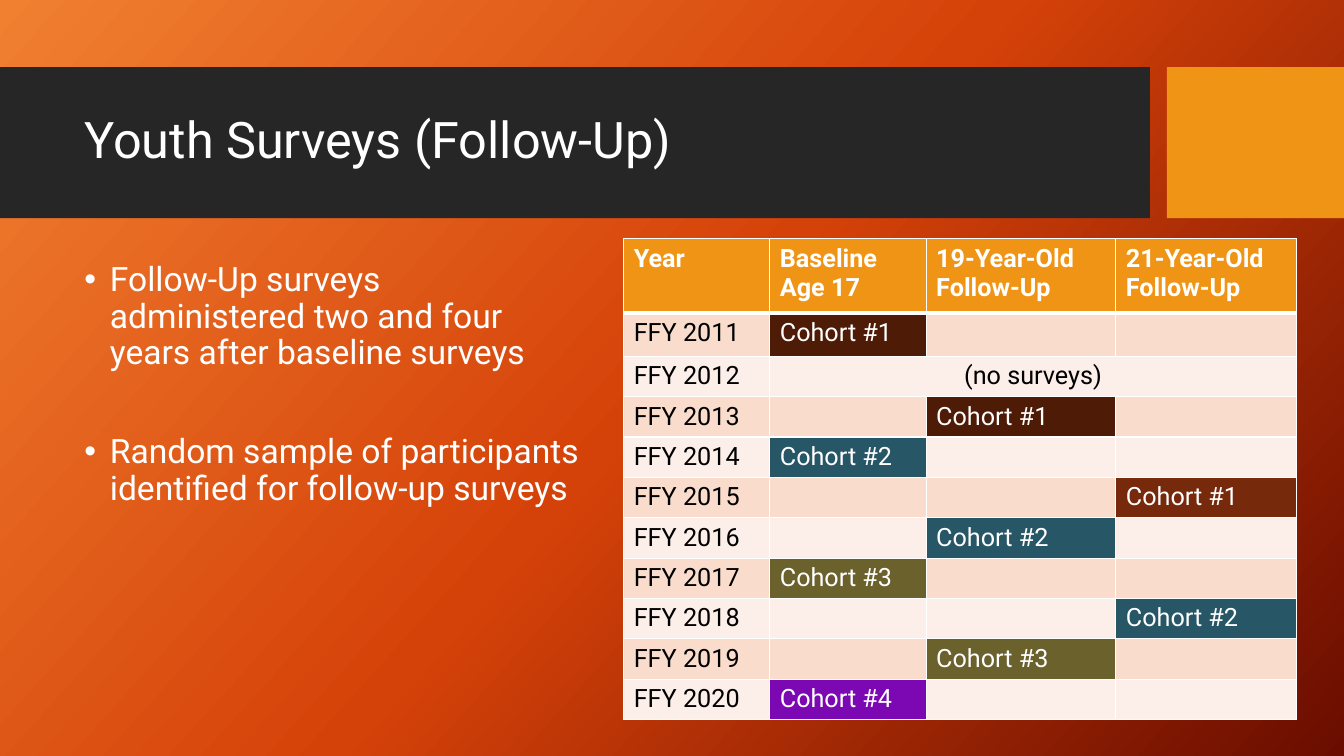
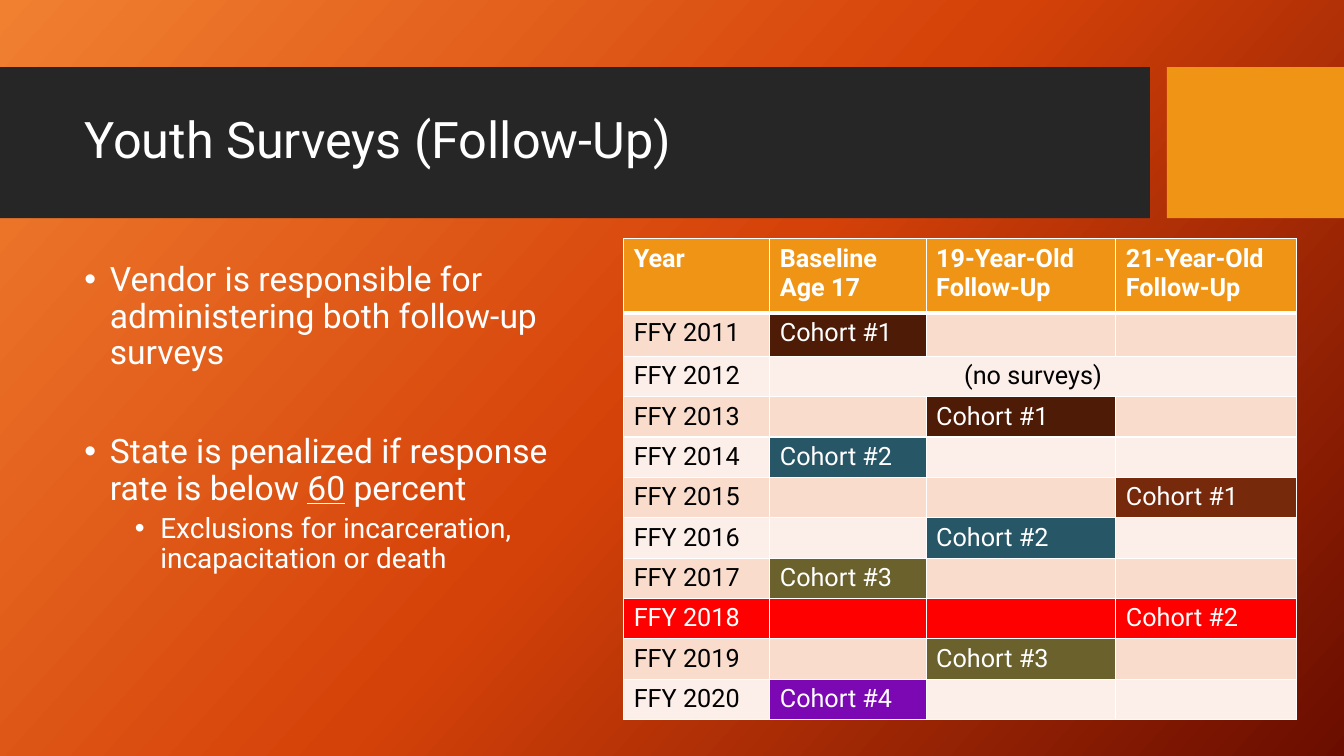
"""Build two slides on follow-up youth surveys, each with bullets and a cohort table."""
from copy import deepcopy

from lxml.etree import SubElement
from pptx import Presentation
from pptx.dml.color import RGBColor
from pptx.enum.shapes import MSO_SHAPE
from pptx.enum.text import MSO_ANCHOR, PP_ALIGN
from pptx.oxml import parse_xml
from pptx.oxml.ns import nsdecls, qn
from pptx.util import Cm, Pt

FONT = "Roboto"
WHITE, BLACK, DARK, ORANGE, RED = "FFFFFF", "000000", "262626", "F09415", "FF0000"
BACKDROP = [(0, "F18031"), (0.5, "D54209"), (1, "6A0D00")]
STRIPES = ["F9DCCC", "FCEEE8"]
BANDS = [(0, 28.98, DARK), (29.41, 4.46, ORANGE)]
BAND_TOP, BAND_HEIGHT = 1.69, 3.81
TITLE = "Youth Surveys (Follow-Up)"

LEVELS = [
    {"size": 24, "margin": 0.64, "before": 45},
    {"size": 20, "margin": 1.91, "before": 5},
]
INDENT = 0.64

COL_WIDTHS = [3.68, 3.94, 4.78, 4.55]
ROW_HEIGHTS = [1.86, 1.1] + [1] * 9
HEADERS = [["Year"], ["Baseline", "Age 17"], ["19-Year-Old", "Follow-Up"],
           ["21-Year-Old", "Follow-Up"]]
FIRST_YEAR = 2011
COHORTS = {
    2011: (1, "Cohort #1", "4E1B07"),
    2013: (2, "Cohort #1", "4E1B07"),
    2014: (1, "Cohort #2", "275666"),
    2015: (3, "Cohort #1", "76290B"),
    2016: (2, "Cohort #2", "275666"),
    2017: (1, "Cohort #3", "6A612C"),
    2018: (3, "Cohort #2", "275666"),
    2019: (2, "Cohort #3", "6A612C"),
    2020: (1, "Cohort #4", "7C08B3"),
}
NO_SURVEYS = 2012

SLIDES = [
    {"bullets": [
        (0, ["Follow-Up surveys administered two and four years after baseline surveys"]),
        (0, ["Random sample of participants identified for follow-up surveys"])],
     "alert_year": None},
    {"bullets": [
        (0, ["Vendor is responsible for administering both follow-up surveys"]),
        (0, ["State is penalized if response rate is below ", "60", " percent"]),
        (1, ["Exclusions for incarceration, incapacitation or death"])],
     "alert_year": 2018},
]
UNDERLINED = "60"


def rgb(value):
    return RGBColor.from_string(value)


def write(p, text, color, **fmt):
    r = p.add_run()
    r.text = text
    r.font.color.rgb = rgb(color)
    for name, value in {"name": FONT, **fmt}.items():
        setattr(r.font, name, value)


prs = Presentation()
prs.slide_width, prs.slide_height = Cm(33.87), Cm(19.05)

fill = prs.slide_master.background.fill
fill.gradient()
fill.gradient_angle = 360 - 42
gs_list = prs.slide_master.element.find(".//" + qn("a:gsLst"))
gs_list.append(deepcopy(gs_list[-1]))
for stop, (position, color) in zip(fill.gradient_stops, BACKDROP):
    stop.position = position
    stop.color.rgb = rgb(color)

for content in SLIDES:
    s = prs.slides.add_slide(prs.slide_layouts[6])

    for left, width, color in BANDS:
        sp = s.shapes.add_shape(MSO_SHAPE.RECTANGLE, Cm(left), Cm(BAND_TOP),
                                Cm(width), Cm(BAND_HEIGHT))
        sp.shadow.inherit = False
        sp.fill.solid()
        sp.fill.fore_color.rgb = rgb(color)
        sp.line.fill.background()

    tf = s.shapes.add_textbox(Cm(1.88), Cm(2.08), Cm(26.7), Cm(3)).text_frame
    tf.word_wrap = True
    tf.vertical_anchor = MSO_ANCHOR.MIDDLE
    p = tf.paragraphs[0]
    p.line_spacing = 0.9
    write(p, TITLE, WHITE, size=Pt(36))

    tf = s.shapes.add_textbox(Cm(1.88), Cm(6.5), Cm(13.06), Cm(11.63)).text_frame
    tf.word_wrap = True
    for i, (level, texts) in enumerate(content["bullets"]):
        style = LEVELS[level]
        p = tf.add_paragraph() if i else tf.paragraphs[0]
        p.level = level
        pPr = p._p.get_or_add_pPr()
        pPr.set("marL", str(Cm(style["margin"])))
        pPr.set("indent", str(-Cm(INDENT)))
        SubElement(pPr, qn("a:buFont"), typeface="Arial")
        SubElement(pPr, qn("a:buChar"), char="•")
        p.line_spacing = 0.9
        p.space_before = Pt(style["before"] if i else 0)
        for text in texts:
            write(p, text, WHITE, size=Pt(style["size"]), underline=text == UNDERLINED)

    table = s.shapes.add_table(len(ROW_HEIGHTS), len(COL_WIDTHS), Cm(15.72), Cm(6.02),
                               Cm(sum(COL_WIDTHS)), Cm(sum(ROW_HEIGHTS))).table
    table.horz_banding = False
    for column, width in zip(table.columns, COL_WIDTHS):
        column.width = Cm(width)
    for row, height in zip(table.rows, ROW_HEIGHTS):
        row.height = Cm(height)

    for i in range(len(ROW_HEIGHTS)):
        year = FIRST_YEAR + i - 1
        alert = year == content["alert_year"]
        cohort_col, cohort, cohort_fill = COHORTS.get(year, (1, "(no surveys)", STRIPES[1]))
        for j in range(len(COL_WIDTHS)):
            lines, ink, color = [], BLACK, STRIPES[(i - 1) % 2]
            if i == 0:
                lines, ink, color = HEADERS[j], WHITE, ORANGE
            elif j == 0:
                lines = [f"FFY {year}"]
            elif j == cohort_col:
                lines, color = [cohort], cohort_fill
                ink = BLACK if year == NO_SURVEYS else WHITE
            if alert:
                ink, color = WHITE, RED

            cell = table.cell(i, j)
            cell.fill.solid()
            cell.fill.fore_color.rgb = rgb(color)
            tcPr = cell._tc.get_or_add_tcPr()
            thick = {0: "B", 1: "T"}.get(i)
            for k, side in enumerate("LRTB"):
                weight = Pt(3 if side == thick else 1)
                tcPr.insert(k, parse_xml(
                    f'<a:ln{side} {nsdecls("a")} w="{weight}"><a:solidFill>'
                    f'<a:srgbClr val="{WHITE}"/></a:solidFill></a:ln{side}>'))
            for k, line in enumerate(lines):
                p = cell.text_frame.add_paragraph() if k else cell.text_frame.paragraphs[0]
                write(p, line, ink, size=Pt(18), bold=i == 0)
            if not lines:
                end = SubElement(cell.text_frame.paragraphs[0]._p, qn("a:endParaRPr"), sz="1800")
                SubElement(end, qn("a:latin"), typeface=FONT)

        if year == NO_SURVEYS:
            table.cell(i, 1).merge(table.cell(i, 3))
            table.cell(i, 1).text_frame.paragraphs[0].alignment = PP_ALIGN.CENTER

prs.save("out.pptx")
